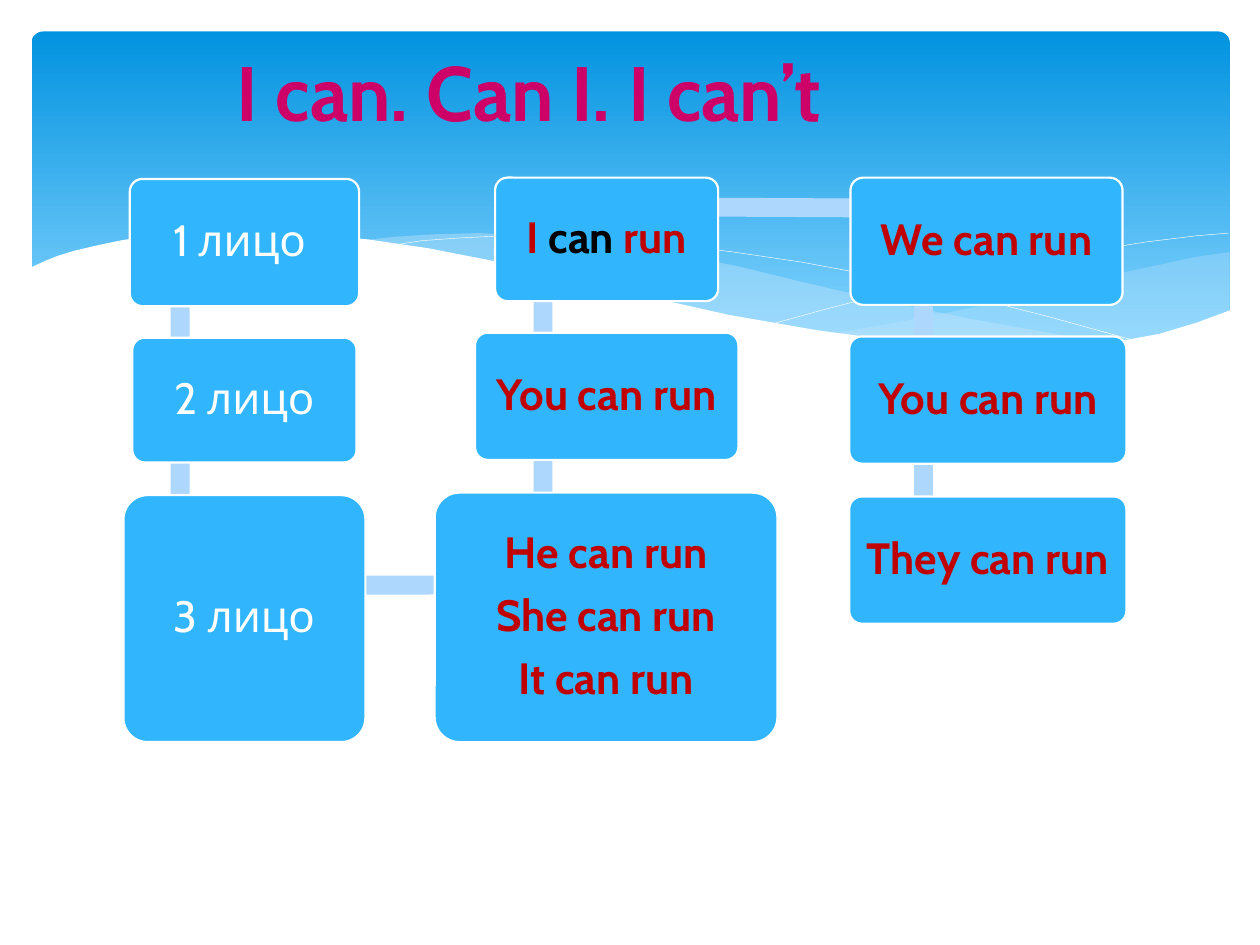
from pptx import Presentation
from pptx.dml.color import RGBColor
from pptx.enum.shapes import MSO_SHAPE as SHAPE
from pptx.enum.text import MSO_ANCHOR as ANCHOR, PP_ALIGN as ALIGN
from pptx.oxml.ns import qn
from pptx.util import Inches, Pt
from lxml.etree import SubElement

WHITE = RGBColor(0xFF, 0xFF, 0xFF)
BLACK = RGBColor(0, 0, 0)
RED = RGBColor(0xC0, 0, 0)
PINK = RGBColor(0xCC, 0, 0x66)
BOX_BLUE = RGBColor(0x31, 0xB6, 0xFD)
BAR_BLUE = RGBColor(0xAE, 0xD7, 0xFE)
SKY_TOP = RGBColor(0x02, 0x93, 0xE0)
SKY_BOTTOM = RGBColor(0x83, 0xD3, 0xFE)
MIST = RGBColor(0xC6, 0xE7, 0xFC)
FONT = "Cabin"
BAR = 0.15
BAR_DROP = 0.25  # a vertical bar starts this far below the top of its box

TITLE = "I can. Can I. I can’t"

# Each column: x of its vertical bar, then boxes of (left, top, width, height),
# text colour and paragraphs; a paragraph is a list of (text, colour) runs.
COLUMNS = [
    (1.43, [
        ((1.03, 1.42, 1.82, 1.01), [[("1 лицо ", WHITE)]]),
        ((1.05, 2.68, 1.78, 0.99), [[("2 лицо", WHITE)]]),
        ((0.98, 3.93, 1.92, 1.96), [[("3 лицо", WHITE)]]),
    ]),
    (4.31, [
        ((3.93, 1.41, 1.77, 0.98), [[("I ", RED), ("can", BLACK), (" run", RED)]]),
        ((3.77, 2.64, 2.09, 1.01), [[("You can run", RED)]]),
        ((3.45, 3.91, 2.72, 1.98), [[("He can run", RED)], [("She can run", RED)],
                                    [("It can run", RED)]]),
    ]),
    (7.33, [
        ((6.75, 1.41, 2.16, 1.01), [[("We can run", RED)]]),
        ((6.74, 2.67, 2.2, 1.01), [[("You can run", RED)]]),
        ((6.74, 3.94, 2.2, 1.01), [[("They can run", RED)]]),
    ]),
]
# Horizontal bars: left column, right column, top, rotation
CROSS_BARS = [(0, 1, 4.57, -0.1), (1, 2, 1.57, 0.3)]

# Waves as (points, fill, opacity in percent); no fill means a white line
WAVES = [
    ([(9.76, 2), (9.48, 2.04), (9.21, 2.1), (8.61, 2.23), (8.05, 2.37), (7.53, 2.48),
      (7.06, 2.57), (6.61, 2.65), (6.91, 2.69), (7.32, 2.74), (7.69, 2.77), (8.14, 2.78),
      (8.54, 2.76), (8.89, 2.72), (9.21, 2.65), (9.49, 2.57), (9.76, 2.47)], MIST, 29),
    ([(8.93, 2.73), (8.37, 2.65), (7.75, 2.54), (7.06, 2.4), (6.29, 2.22), (5.84, 2.11),
      (5.41, 2.03), (5.02, 1.96), (4.65, 1.91), (4.2, 1.87), (3.8, 1.85), (3.44, 1.86),
      (3.13, 1.88), (2.86, 1.91), (3.23, 1.96), (3.62, 2.03), (4.04, 2.11), (4.49, 2.22),
      (5.3, 2.4), (6.01, 2.55), (6.5, 2.64), (6.95, 2.7), (7.36, 2.75), (7.85, 2.78),
      (8.28, 2.78), (8.67, 2.76), (8.93, 2.73)], MIST, 40),
    ([(3.09, 1.95), (3.35, 1.91), (3.63, 1.89), (4.01, 1.87), (4.5, 1.88), (4.89, 1.9),
      (5.33, 1.94), (5.82, 2), (6.36, 2.08), (6.95, 2.19), (7.6, 2.33), (8.31, 2.51),
      (9.07, 2.72)], None, None),
    ([(6.13, 2.57), (6.53, 2.46), (6.95, 2.35), (7.48, 2.23), (8.06, 2.1), (8.66, 1.99),
      (9.1, 1.92), (9.51, 1.87), (9.75, 1.85)], None, None),
    ([(9.77, 2.46), (9.5, 2.56), (9.2, 2.65), (8.87, 2.71), (8.5, 2.75), (8.09, 2.77),
      (7.61, 2.75), (7.08, 2.7), (6.48, 2.62), (5.79, 2.5), (5.03, 2.33), (4.47, 2.2),
      (3.91, 2.07), (3.4, 1.97), (2.92, 1.9), (2.5, 1.86), (2.11, 1.84), (1.77, 1.84),
      (1.46, 1.85), (1.19, 1.87), (0.95, 1.91), (0.76, 1.95), (0.59, 1.99), (0.46, 2.03),
      (0.36, 2.07), (0.23, 2.13), (0.23, 3.29), (9.77, 3.29)], WHITE, 100),
]


def add_shape(s, kind, at):
    sp = s.shapes.add_shape(kind, *map(Inches, at))
    sp.shadow.inherit = False
    sp.line.fill.background()
    return sp


def add_sky(s):
    sky = add_shape(s, SHAPE.ROUNDED_RECTANGLE, (0.25, 0.25, 9.51, 2.7))
    sky.adjustments[0] = 0.034
    sky.fill.gradient()
    sky.fill.gradient_angle = 270
    colours = [(0, SKY_TOP), (0.9, SKY_BOTTOM)]
    for stop, (position, colour) in zip(sky.fill.gradient_stops, colours):
        stop.position = position
        stop.color.rgb = colour


def add_wave(s, points, fill, opacity):
    start, *rest = [(Inches(x), Inches(y)) for x, y in points]
    builder = s.shapes.build_freeform(*start)
    builder.add_line_segments(rest, close=fill is not None)
    sp = builder.convert_to_shape()
    sp.shadow.inherit = False
    if fill is None:
        sp.fill.background()
        sp.line.color.rgb = WHITE
        sp.line.width = Pt(0.25)
        return
    sp.line.fill.background()
    sp.fill.solid()
    sp.fill.fore_color.rgb = fill
    if opacity < 100:
        colour = sp._element.spPr.find(".//" + qn("a:srgbClr"))
        SubElement(colour, qn("a:alpha"), val=str(opacity * 1000))


def add_bar(s, at, rotation=0):
    bar = add_shape(s, SHAPE.RECTANGLE, at)
    bar.rotation = rotation
    bar.fill.solid()
    bar.fill.fore_color.rgb = BAR_BLUE


def add_run(p, text, size, colour, bold):
    r = p.add_run()
    r.text = text
    r.font.name, r.font.size, r.font.bold = FONT, Pt(size), bold
    r.font.color.rgb = colour


def add_box(s, at, paragraphs):
    box = add_shape(s, SHAPE.ROUNDED_RECTANGLE, at)
    box.adjustments[0] = 0.1
    box.fill.solid()
    box.fill.fore_color.rgb = BOX_BLUE
    box.line.color.rgb = WHITE
    box.line.width = Pt(1.25)
    tf = box.text_frame
    tf.word_wrap = True
    tf.vertical_anchor = ANCHOR.MIDDLE
    tf.margin_left = tf.margin_right = tf.margin_top = tf.margin_bottom = Inches(0.1)
    for i, runs in enumerate(paragraphs):
        p = tf.add_paragraph() if i else tf.paragraphs[0]
        p.alignment = ALIGN.CENTER
        p.line_spacing = 0.9
        p.space_after = Pt(8.75)
        for text, colour in runs:
            add_run(p, text, 25, colour, colour != WHITE)


def add_title(s):
    tf = s.shapes.add_textbox(*map(Inches, (0, 0.24, 8.4, 0.96))).text_frame
    tf.word_wrap = True
    tf.vertical_anchor = ANCHOR.MIDDLE
    p = tf.paragraphs[0]
    p.alignment = ALIGN.CENTER
    add_run(p, TITLE, 44, PINK, True)


def main():
    prs = Presentation()
    prs.slide_width, prs.slide_height = Inches(10), Inches(7.5)
    s = prs.slides.add_slide(prs.slide_layouts[6])
    add_sky(s)
    for wave in WAVES:
        add_wave(s, *wave)
    add_title(s)

    for x, boxes in COLUMNS:
        tops = [at[1] for at, _ in boxes]
        for top, below in zip(tops, tops[1:]):
            add_bar(s, (x - BAR / 2, top + BAR_DROP, BAR, below - top))
    for left, right, top, rotation in CROSS_BARS:
        x1, x2 = COLUMNS[left][0], COLUMNS[right][0]
        add_bar(s, (x1, top, x2 - x1, BAR), rotation)
    for _, boxes in COLUMNS:
        for at, paragraphs in boxes:
            add_box(s, at, paragraphs)
    prs.save("out.pptx")


if __name__ == "__main__":
    main()
